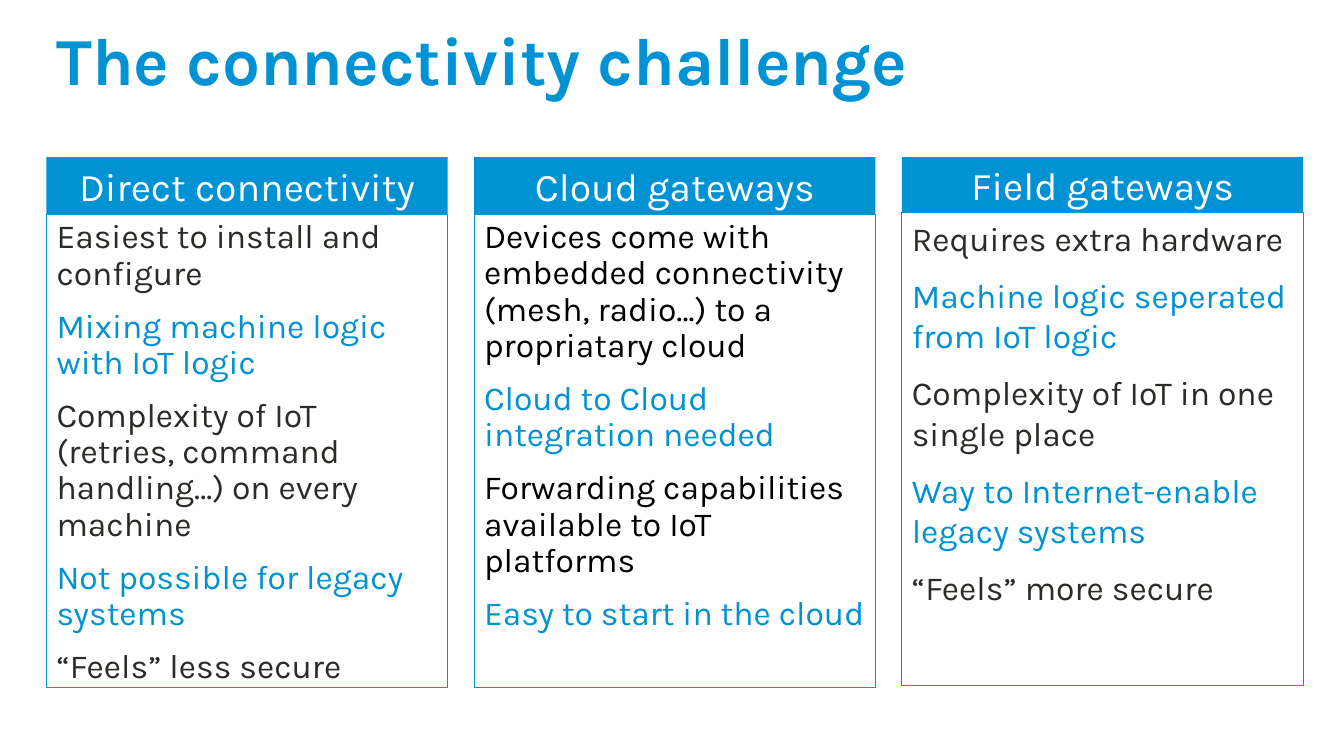
import pptx
import pptx.util
import pptx.dml.color
import pptx.enum.shapes
import pptx.enum.text
import pptx.oxml.ns
import lxml.etree

Cm, Pt = pptx.util.Cm, pptx.util.Pt
RGBColor = pptx.dml.color.RGBColor
PP_ALIGN = pptx.enum.text.PP_ALIGN
ANCHOR = pptx.enum.text.MSO_ANCHOR
RECTANGLE = pptx.enum.shapes.MSO_SHAPE.RECTANGLE

BLUE = RGBColor(0x00, 0x92, 0xD3)
CHARCOAL = RGBColor(0x2B, 0x2C, 0x27)
BLACK = RGBColor(0, 0, 0)
WHITE = RGBColor(255, 255, 255)

TITLE = "The connectivity challenge"
COLUMNS = [
    {"heading": "Direct connectivity", "header_height": 1.45,
     "color": CHARCOAL, "line_spacing": 0.9,
     "points": ["Easiest to install and configure",
                "Mixing machine logic with IoT logic",
                "Complexity of IoT (retries, command handling…) on every machine",
                "Not possible for legacy systems",
                "“Feels” less secure"]},
    {"heading": "Cloud gateways", "header_height": 1.45,
     "color": BLACK, "line_spacing": 0.9,
     "points": ["Devices come with embedded connectivity (mesh, radio…) to a propriatary cloud",
                "Cloud to Cloud integration needed",
                "Forwarding capabilities available to IoT platforms",
                "Easy to start in the cloud"]},
    {"heading": "Field gateways", "header_height": 1.4,
     "color": CHARCOAL, "line_spacing": 1.0,
     "points": ["Requires extra hardware",
                "Machine logic seperated from IoT logic",
                "Complexity of IoT in one single place",
                "Way to Internet-enable legacy systems",
                "“Feels” more secure"]},
]

LEFT, TOP = 1.17, 3.96
COLUMN_WIDTH, COLUMN_PITCH, BODY_HEIGHT = 10.11, 10.78, 11.91


def place(sp, left, top, width, height):
    sp.left, sp.top, sp.width, sp.height = map(Cm, (left, top, width, height))


def write(sp, lines, anchor, font, paragraph):
    """Fill a shape with (text, colour) lines sharing one format."""
    tf = sp.text_frame
    tf.word_wrap = True
    tf.auto_size = pptx.enum.text.MSO_AUTO_SIZE.NONE
    tf.vertical_anchor = anchor
    for i, (text, color) in enumerate(lines):
        p = tf.paragraphs[0] if i == 0 else tf.add_paragraph()
        for name, value in paragraph.items():
            setattr(p, name, value)
        p.space_before = Pt(0)
        pPr = p._p.get_or_add_pPr()
        pPr.set("marL", "0")
        pPr.set("indent", "0")
        lxml.etree.SubElement(pPr, pptx.oxml.ns.qn("a:buNone"))
        r = p.add_run()
        r.text = text
        for name, value in {"name": "Karla", **font}.items():
            setattr(r.font, name, value)
        r.font.color.rgb = color


def add_panel(s):
    sp = s.shapes.add_shape(RECTANGLE, 0, 0, 0, 0)
    sp.shadow.inherit = False
    return sp


def fill(sp, color):
    sp.fill.solid()
    sp.fill.fore_color.rgb = color


def add_column(s, index, column):
    left = LEFT + index * COLUMN_PITCH
    height = column["header_height"]

    body = s.placeholders[1] if index == 0 else add_panel(s)
    place(body, left, TOP + height, COLUMN_WIDTH, BODY_HEIGHT)
    fill(body, WHITE)
    body.line.color.rgb = BLUE
    body.line.width = Pt(0.75)
    lines = [(text, BLUE if i % 2 else column["color"])
             for i, text in enumerate(column["points"])]
    write(body, lines, ANCHOR.TOP, {"size": Pt(24)},
          {"alignment": PP_ALIGN.LEFT, "space_after": Pt(12),
           "line_spacing": column["line_spacing"]})

    header = add_panel(s)
    place(header, left, TOP, COLUMN_WIDTH, height)
    fill(header, BLUE)
    header.line.fill.background()
    write(header, [(column["heading"], WHITE)], ANCHOR.MIDDLE, {"size": Pt(28)},
          {"alignment": PP_ALIGN.CENTER, "space_after": Pt(12)})


def main():
    prs = pptx.Presentation()
    prs.slide_width, prs.slide_height = Cm(33.87), Cm(19.05)
    s = prs.slides.add_slide(prs.slide_layouts[1])

    title = s.shapes.title
    place(title, LEFT, 0.76, 28.45, 1.7)
    write(title, [(TITLE, BLUE)], ANCHOR.MIDDLE, {"size": Pt(48), "bold": True},
          {"alignment": PP_ALIGN.LEFT, "line_spacing": 0.9})

    for index, column in enumerate(COLUMNS):
        add_column(s, index, column)
    prs.save("out.pptx")


if __name__ == "__main__":
    main()
